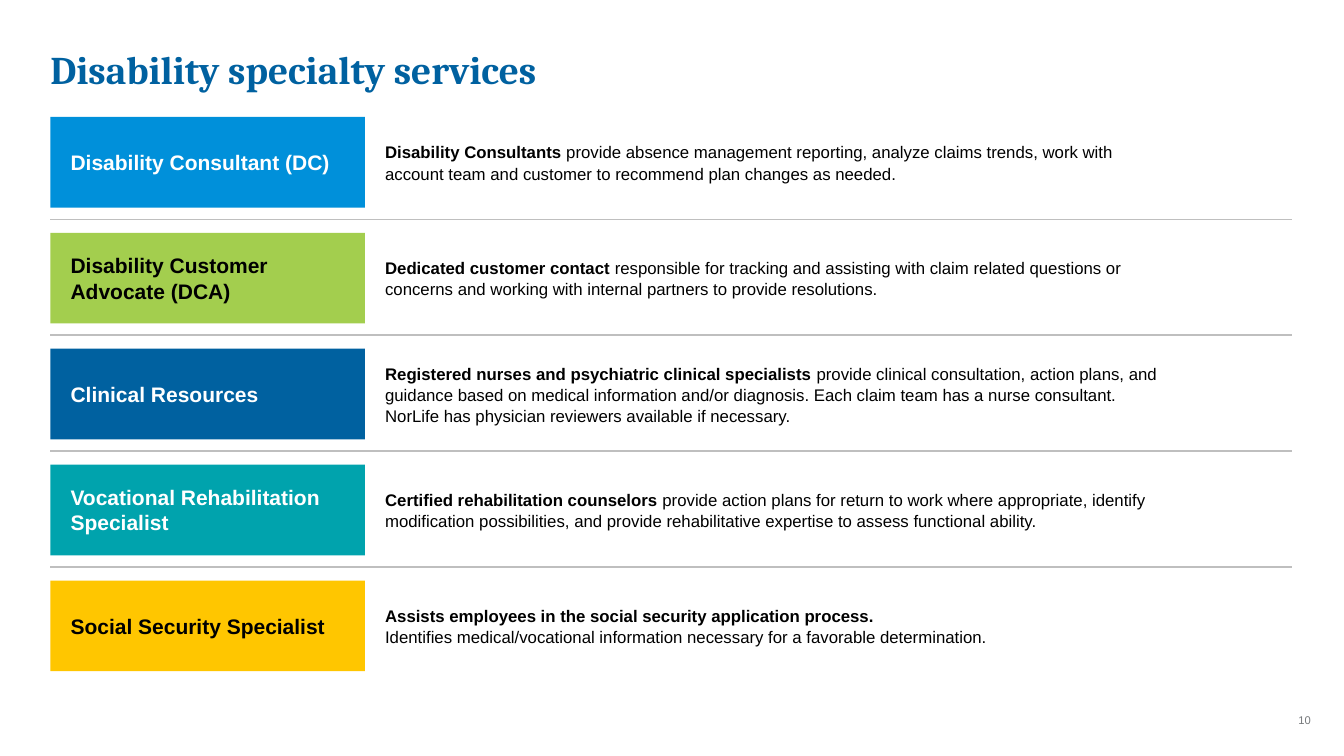
"""Build the slide on disability specialty services."""
from dataclasses import dataclass

from lxml.etree import SubElement as Sub
from pptx import Presentation as Deck
from pptx.dml.color import RGBColor as Color
from pptx.enum.shapes import MSO_CONNECTOR as Link, MSO_SHAPE as Form
from pptx.enum.text import MSO_ANCHOR as Anchor, PP_ALIGN as Align
from pptx.oxml.ns import qn
from pptx.shapes.base import BaseShape as Shape
from pptx.slide import Slide
from pptx.util import Inches, Pt


@dataclass(frozen=True)
class Theme:
    blue: str = "0061A0"
    sky: str = "0090DA"
    green: str = "A3CE4E"
    teal: str = "00A3AD"
    gold: str = "FFC600"
    white: str = "FFFFFF"
    black: str = "000000"
    grey: str = "75787B"
    rule: str = "BFBFBF"
    head: str = "Cambria"
    body: str = "Arial"
    large: int = 28
    label: int = 15
    text: int = 12
    small: int = 8


@dataclass(frozen=True)
class Grid:
    wide: float = 13.33
    high: float = 7.5
    left: float = 0.5
    right: float = 12.81
    top: float = 1.16
    pitch: float = 1.15
    tile: float = 3.12
    row: float = 0.9
    note: float = 3.76
    span: float = 7.83

    def at(self, num: int) -> float:
        """Give the top of a row."""
        return self.top + num * self.pitch

    def split(self, num: int) -> float:
        """Give the height of the rule above a row."""
        return self.at(num) - (self.pitch - self.row) / 2 - 0.01


@dataclass(frozen=True)
class Role:
    name: str
    fill: str
    ink: str
    lead: str
    rest: str


THEME = Theme()
GRID = Grid()
ROLES = (
    Role("Disability Consultant (DC)", THEME.sky, THEME.white,
         "Disability Consultants ",
         "provide absence management reporting, analyze claims trends, work with "
         "account team and customer to recommend plan changes as needed."),
    Role("Disability Customer Advocate (DCA)", THEME.green, THEME.black,
         "Dedicated customer contact",
         " responsible for tracking and assisting with claim related questions or "
         "concerns and working with internal partners to provide resolutions."),
    Role("Clinical Resources", THEME.blue, THEME.white,
         "Registered nurses and psychiatric clinical specialists ",
         "provide clinical consultation, action plans, and guidance based on medical "
         "information and/or diagnosis. Each claim team has a nurse consultant. "
         "NorLife has physician reviewers available if necessary."),
    Role("Vocational Rehabilitation Specialist", THEME.teal, THEME.white,
         "Certified rehabilitation counselors ",
         "provide action plans for return to work where appropriate, identify "
         "modification possibilities, and provide rehabilitative expertise to assess "
         "functional ability."),
    Role("Social Security Specialist", THEME.gold, THEME.black,
         "Assists employees in the social security application process.\n",
         "Identifies medical/vocational information necessary for a favorable "
         "determination."),
)


def write(shape: Shape, lead: str, rest: str = "", *, size: int, ink: str = THEME.black,
          font: str = THEME.body, bold: bool = True, align: Align = Align.LEFT,
          anchor: Anchor = Anchor.MIDDLE, pad: tuple[float, float] = (0, 0),
          space: float = 1.0) -> None:
    """Fill a shape with a lead and plain text after it."""
    frame = shape.text_frame
    frame.word_wrap = True
    frame.vertical_anchor = anchor
    frame.margin_left = frame.margin_right = Inches(pad[0])
    frame.margin_top = frame.margin_bottom = Inches(pad[1])
    para = frame.paragraphs[0]
    para.alignment = align
    para.line_spacing = space
    for part, heavy in ((lead, bold), (rest, False)):
        if not part:
            continue
        run = para.add_run()
        run.text = part.rstrip("\n")
        run.font.name = font
        run.font.size = Pt(size)
        run.font.bold = heavy
        run.font.color.rgb = Color.from_string(ink)
        if part.endswith("\n"):
            para.add_line_break()


def box(slide: Slide, left: float, top: float, wide: float, high: float) -> Shape:
    """Add an empty text box."""
    return slide.shapes.add_textbox(*map(Inches, (left, top, wide, high)))


def tile(slide: Slide, role: Role, top: float) -> None:
    """Draw the coloured label of a role."""
    shape = slide.shapes.add_shape(
        Form.RECTANGLE, *map(Inches, (GRID.left, top, GRID.tile, GRID.row)))
    shape.shadow.inherit = False
    shape.fill.solid()
    shape.fill.fore_color.rgb = Color.from_string(role.fill)
    shape.line.fill.background()
    write(shape, role.name, size=THEME.label, ink=role.ink, pad=(0.2, 0.15))


def rule(slide: Slide, top: float) -> None:
    """Draw a line between rows."""
    line = slide.shapes.add_connector(
        Link.STRAIGHT, *map(Inches, (GRID.left, top, GRID.right, top)))
    line.line.color.rgb = Color.from_string(THEME.rule)
    line.line.width = Pt(1)
    Sub(line.element.spPr, qn("a:effectLst"))


def main() -> None:
    """Draw and save the slide."""
    deck = Deck()
    deck.slide_width, deck.slide_height = Inches(GRID.wide), Inches(GRID.high)
    slide = deck.slides.add_slide(deck.slide_layouts[6])
    write(box(slide, GRID.left, 0.5, 10.34, 0.8), "Disability specialty services",
          size=THEME.large, ink=THEME.blue, font=THEME.head,
          anchor=Anchor.TOP, space=0.9)
    for num, role in enumerate(ROLES):
        top = GRID.at(num)
        if num:
            rule(slide, GRID.split(num))
        tile(slide, role, top)
        write(box(slide, GRID.note, top, GRID.span, GRID.row), role.lead, role.rest,
              size=THEME.text, pad=(0.06, 0), space=1.05)
    write(box(slide, 12.54, 7.02, 0.8, 0.25), "10", size=THEME.small,
          ink=THEME.grey, bold=False, align=Align.CENTER)
    deck.save("out.pptx")


if __name__ == "__main__":
    main()
